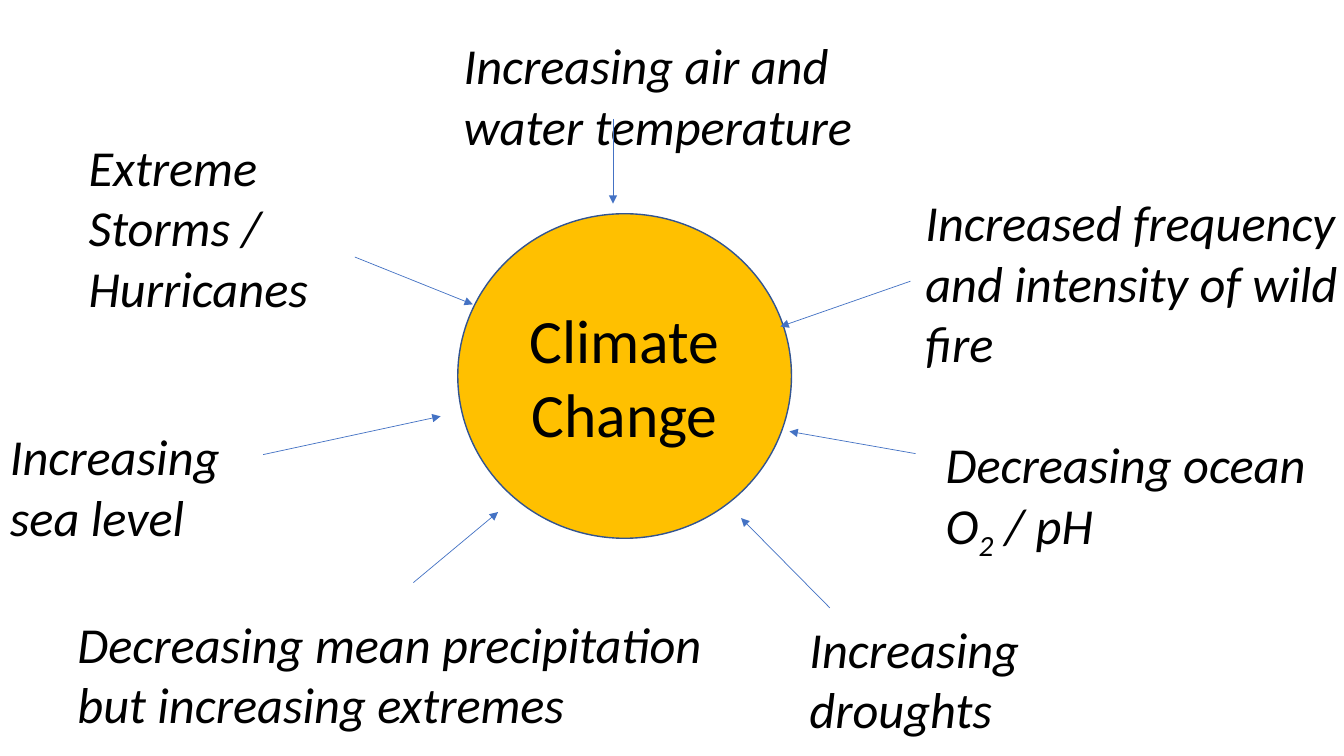
from lxml import etree
from pptx import Presentation
from pptx.dml.color import RGBColor
from pptx.enum.shapes import MSO_CONNECTOR as Connector, MSO_SHAPE as Shape
from pptx.enum.text import MSO_ANCHOR as Anchor, MSO_AUTO_SIZE as AutoSize, PP_ALIGN as Align
from pptx.oxml.ns import qn
from pptx.util import Inches, Pt

COLORS = {"text": "000000", "circle": "FFC000", "outline": "325491", "arrow": "4472C4"}

LABELS = [
    (7.93, 6.08, 3.66, 1.31, ["Increasing droughts"]),
    (9.08, 1.85, 4.63, 1.92, ["Increased frequency and intensity of wild fire"]),
    (0.78, 1.3, 2.94, 1.92, ["Extreme Storms / Hurricanes"]),
    (4.5, 0.29, 4.13, 1.31, ["Increasing air and water temperature"]),
    (0.67, 6.03, 6.83, 1.31, ["Decreasing mean precipitation but increasing extremes"]),
    (9.28, 4.25, 4.05, 1.31, ["Decreasing ocean O", "2", " / pH"]),
    (0, 4.17, 2.47, 1.31, ["Increasing sea level"]),
]

ARROWS = [
    (4.1, 5.78, 4.94, 5.08),
    (3.52, 2.55, 4.69, 3.02),
    (6.08, 1.18, 6.08, 2.02),
    (9.03, 2.79, 7.74, 3.24),
    (8.23, 6.03, 7.35, 5.14),
    (2.61, 4.51, 4.37, 4.13),
    (9.08, 4.5, 7.83, 4.28),
]


class ClimateSlide:
    font_name = "Calibri"
    label_size = 36
    center_size = 44

    def __init__(self, slide):
        self.slide = slide

    def color(self, name):
        return RGBColor.from_string(COLORS[name])

    def style(self, paragraph, size, italic=False):
        font = paragraph.font
        font.name = self.font_name
        font.size = Pt(size)
        font.italic = italic
        font.color.rgb = self.color("text")

    def circle(self, left, top, width, height, text):
        shape = self.slide.shapes.add_shape(
            Shape.OVAL, Inches(left), Inches(top), Inches(width), Inches(height))
        shape.shadow.inherit = False
        shape.fill.solid()
        shape.fill.fore_color.rgb = self.color("circle")
        shape.line.color.rgb = self.color("outline")
        shape.line.width = Pt(1)
        frame = shape.text_frame
        frame.word_wrap = True
        frame.vertical_anchor = Anchor.MIDDLE
        paragraph = frame.paragraphs[0]
        paragraph.alignment = Align.CENTER
        paragraph.add_run().text = text
        self.style(paragraph, self.center_size)

    def label(self, left, top, width, height, parts):
        box = self.slide.shapes.add_textbox(
            Inches(left), Inches(top), Inches(width), Inches(height))
        frame = box.text_frame
        frame.word_wrap = True
        frame.auto_size = AutoSize.SHAPE_TO_FIT_TEXT
        paragraph = frame.paragraphs[0]
        for index, part in enumerate(parts):
            run = paragraph.add_run()
            run.text = part
            if index % 2:
                run._r.get_or_add_rPr().set("baseline", "-25000")
        self.style(paragraph, self.label_size, italic=True)

    def arrow(self, start_x, start_y, end_x, end_y):
        connector = self.slide.shapes.add_connector(
            Connector.STRAIGHT, Inches(start_x), Inches(start_y), Inches(end_x), Inches(end_y))
        connector.line.color.rgb = self.color("arrow")
        connector.line.width = Pt(0.5)
        properties = connector._element.spPr
        etree.SubElement(properties.find(qn("a:ln")), qn("a:tailEnd"), type="triangle")
        etree.SubElement(properties, qn("a:effectLst"))


def main():
    presentation = Presentation()
    presentation.slide_width = Inches(13.33)
    presentation.slide_height = Inches(7.5)
    climate = ClimateSlide(presentation.slides.add_slide(presentation.slide_layouts[6]))
    climate.circle(4.54, 2.12, 3.31, 3.22, "Climate Change")
    for label in LABELS:
        climate.label(*label)
    for arrow in ARROWS:
        climate.arrow(*arrow)
    presentation.save("out.pptx")


if __name__ == "__main__":
    main()
